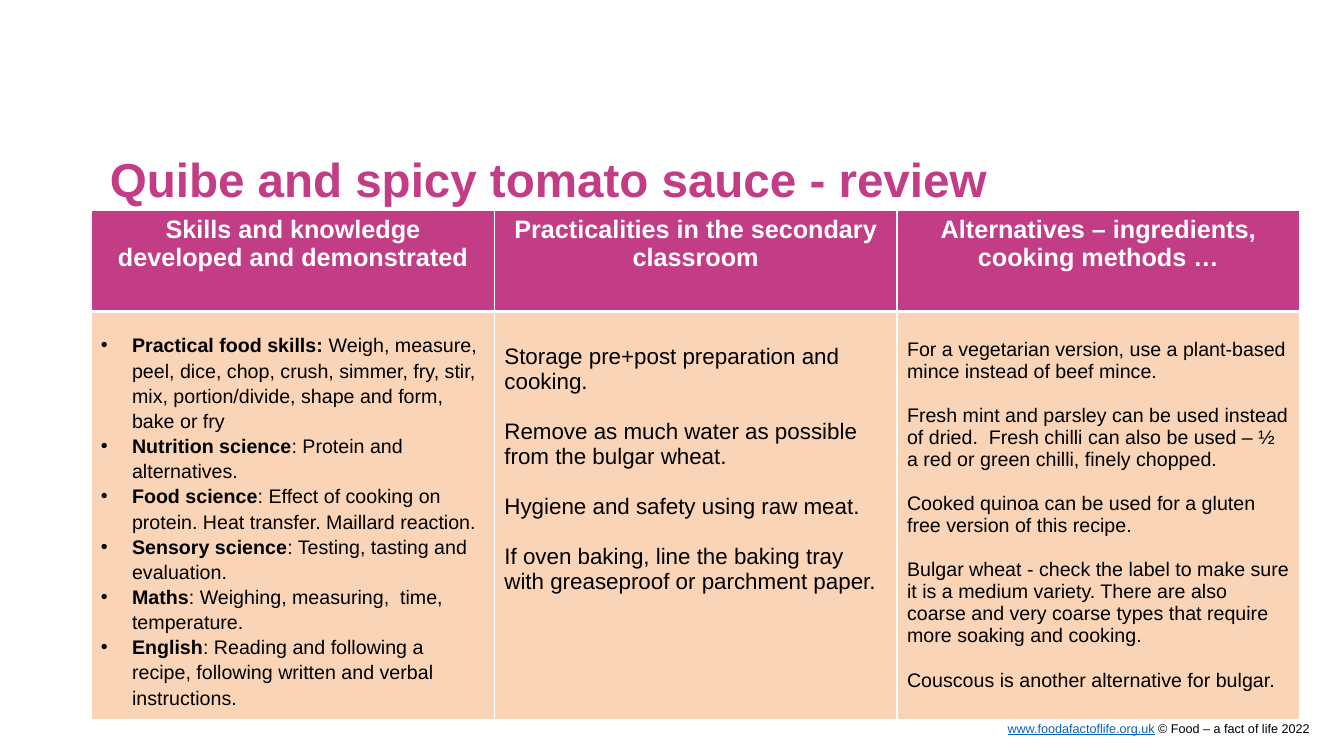
from lxml import etree
from pptx import Presentation
from pptx.dml.color import RGBColor
from pptx.enum import text as t
from pptx.oxml import ns
from pptx.util import Inches, Pt

FONT = "Arial"
PINK = RGBColor(0xC3, 0x3D, 0x86)
PEACH = RGBColor(0xF9, 0xD4, 0xB6)
WHITE = RGBColor(0xFF, 0xFF, 0xFF)
BLACK = RGBColor(0, 0, 0)
LINK_BLUE = RGBColor(0x05, 0x63, 0xC1)

HEADINGS = [
    "Skills and knowledge developed and demonstrated",
    "Practicalities in the secondary classroom",
    "Alternatives – ingredients, cooking methods …",
]
SKILLS = [
    ("Practical food skills:", " Weigh, measure, peel, dice, chop, crush, simmer, fry, stir, "
     "mix, portion/divide, shape and form, bake or fry"),
    ("Nutrition science", ": Protein and alternatives."),
    ("Food science", ": Effect of cooking on protein. Heat transfer. Maillard reaction."),
    ("Sensory science", ": Testing, tasting and evaluation."),
    ("Maths", ": Weighing, measuring,  time, temperature."),
    ("English", ": Reading and following a recipe, following written and verbal instructions."),
]
PRACTICALITIES = [
    "Storage pre+post preparation and cooking.",
    "Remove as much water as possible from the bulgar wheat.",
    "Hygiene and safety using raw meat.",
    "If oven baking, line the baking tray with greaseproof or parchment paper.",
]
ALTERNATIVES = [
    "For a vegetarian version, use a plant-based mince instead of beef mince.",
    "Fresh mint and parsley can be used instead of dried.  Fresh chilli can also be used – "
    "½ a red or green chilli, finely chopped.",
    "Cooked quinoa can be used for a gluten free version of this recipe.",
    "Bulgar wheat - check the label to make sure it is a medium variety. There are also "
    "coarse and very coarse types that require more soaking and cooking.",
    "Couscous is another alternative for bulgar.",
]


def add_run(paragraph, words, size, color=BLACK, bold=False, underline=False):
    run = paragraph.add_run()
    run.text = words
    font = run.font
    font.name, font.size, font.bold, font.underline = FONT, Pt(size), bold, underline
    font.color.rgb = color


def place(shape, left, top, width, height):
    shape.left, shape.top = Inches(left), Inches(top)
    shape.width, shape.height = Inches(width), Inches(height)


def set_frame(frame, left=0, top=0, right=0, bottom=0):
    """Set the insets in inches, with wrapped text that starts at the top."""
    frame.margin_left, frame.margin_top = Inches(left), Inches(top)
    frame.margin_right, frame.margin_bottom = Inches(right), Inches(bottom)
    frame.word_wrap = True
    frame.auto_size = t.MSO_AUTO_SIZE.NONE
    frame.vertical_anchor = t.MSO_ANCHOR.TOP


def paragraphs(frame, items):
    """Yield a paragraph for each item, reusing the first one."""
    for index, item in enumerate(items):
        yield (frame.add_paragraph() if index else frame.paragraphs[0]), item


def style_cell(cell, fill, bottom_line):
    properties = cell._tc.get_or_add_tcPr()
    for side, width in (("L", 1), ("R", 1), ("T", 1), ("B", bottom_line)):
        line = etree.SubElement(properties, ns.qn(f"a:ln{side}"), w=str(Pt(width)))
        solid = etree.SubElement(line, ns.qn("a:solidFill"))
        etree.SubElement(solid, ns.qn("a:srgbClr"), val=str(WHITE))
    cell.fill.solid()
    cell.fill.fore_color.rgb = fill


def fill_notes(cell, notes, size, top, gap):
    cell.margin_top = Inches(top)
    for index, (paragraph, note) in enumerate(paragraphs(cell.text_frame, notes)):
        if index:
            paragraph.space_before = Pt(gap)
        add_run(paragraph, note, size)


def add_title(slide):
    title = slide.shapes.title
    place(title, 0.96, 1.55, 10.63, 0.79)
    set_frame(title.text_frame, left=0.13)
    paragraph = title.text_frame.paragraphs[0]
    paragraph.alignment = t.PP_ALIGN.LEFT
    paragraph.line_spacing = 0.9
    add_run(paragraph, "Quibe and spicy tomato sauce - review", 34, PINK, bold=True)


def add_review_table(slide):
    frame = slide.shapes.add_table(
        2, 3, Inches(0.91), Inches(2.09), Inches(11.98), Inches(5.05))
    table = frame.table
    table.rows[0].height, table.rows[1].height = Inches(1), Inches(4.05)
    for column, heading in enumerate(HEADINGS):
        header = table.cell(0, column)
        style_cell(header, PINK, 3)
        style_cell(table.cell(1, column), PEACH, 1)
        paragraph = header.text_frame.paragraphs[0]
        paragraph.alignment = t.PP_ALIGN.CENTER
        add_run(paragraph, heading, 18, WHITE, bold=True)
    fill_notes(table.cell(1, 1), PRACTICALITIES, 16, 0.33, 18)
    fill_notes(table.cell(1, 2), ALTERNATIVES, 14, 0.27, 15.75)
    return frame


def fill_skills(skills):
    place(skills, 0.9, 3.24, 3.98, 3.87)
    set_frame(skills.text_frame, 0.1, 0.05, 0.1, 0.05)
    for paragraph, (skill, detail) in paragraphs(skills.text_frame, SKILLS):
        paragraph.line_spacing = 1.07
        paragraph.space_before = Pt(0)
        properties = paragraph._p.get_or_add_pPr()
        properties.set("marL", str(Inches(0.31)))
        properties.set("indent", str(-Inches(0.31)))
        etree.SubElement(properties, ns.qn("a:buFont"), typeface=FONT)
        etree.SubElement(properties, ns.qn("a:buChar"), char="•")
        add_run(paragraph, skill, 14, bold=True)
        add_run(paragraph, detail, 14)


def add_footer(slide):
    footer = slide.shapes.add_textbox(
        Inches(1.26), Inches(7.15), Inches(11.73), Inches(0.15))
    set_frame(footer.text_frame)
    paragraph = footer.text_frame.paragraphs[0]
    paragraph.alignment = t.PP_ALIGN.RIGHT
    add_run(paragraph, "www.foodafactoflife.org.uk", 9, LINK_BLUE, underline=True)
    add_run(paragraph, " © Food – a fact of life 2022", 9)


def main():
    deck = Presentation()
    deck.slide_width, deck.slide_height = Inches(13.33), Inches(7.5)
    slide = deck.slides.add_slide(deck.slide_layouts[1])
    add_title(slide)
    skills = slide.placeholders[1]
    fill_skills(skills)
    table = add_review_table(slide)
    # The skills list lies in front of the table.
    table.element.addnext(skills.element)
    add_footer(slide)
    deck.save("out.pptx")


if __name__ == "__main__":
    main()
